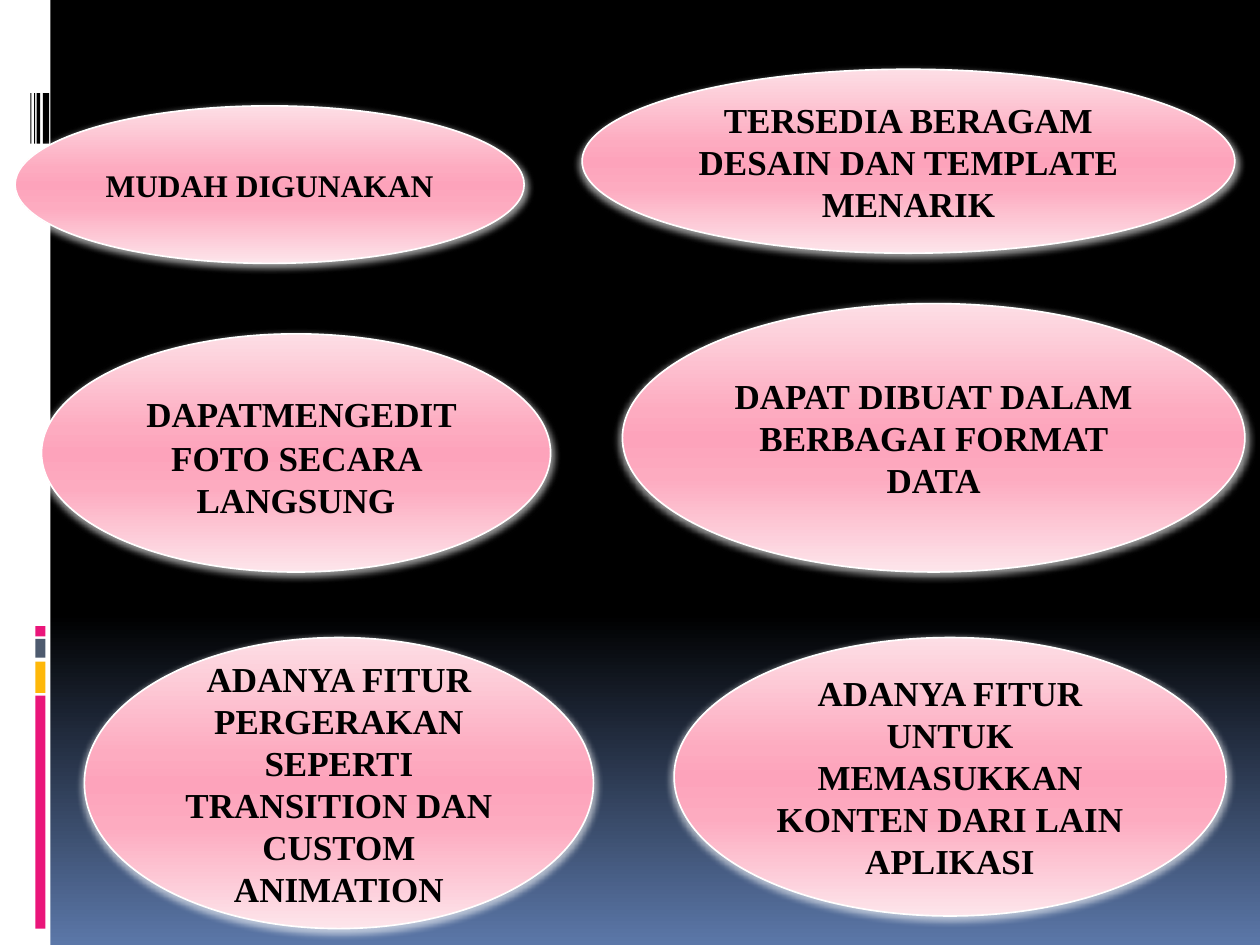
import pptx
import pptx.dml.color
import pptx.enum.shapes
import pptx.enum.text
import pptx.oxml
import pptx.oxml.ns
import pptx.util
from lxml import etree
from pptx.util import Inches

FONT = "Times New Roman"
COLORS = {
    "white": "FFFFFF", "black": "000000",
    "pink": "EA157A", "yellow": "FEB80A", "slate": "4E5B6F",
}
BACKGROUND_STOPS = [(0, "000000"), (65, "000000"), (100, "5B77A8")]
BUBBLE_STOPS = [(0, "FDDEE5"), (40, "FDABC0"), (50, "FDA3BB"),
                (65, "FDABC0"), (100, "FDE5EB")]

# left, top, width, height, colour
SIDE_BAR = [
    (0, 0, 0.4, 7.5, "white"),
    (0.28, 5.52, 0.08, 1.85, "pink"),
    (0.28, 5.25, 0.08, 0.25, "yellow"),
    (0.28, 5.07, 0.08, 0.15, "slate"),
    (0.28, 4.97, 0.08, 0.08, "pink"),
]
# left, width
BARCODE = [(0.34, 0.05), (0.29, 0.03), (0.27, 0.01), (0.24, 0.01)]

# left, top, width, height, runs as (text, size)
BUBBLES = [
    (0.12, 0.84, 4.04, 1.25, [("MUDAH DIGUNAKAN", 18)]),
    (0.33, 2.65, 4.04, 1.89,
     [(" ", 24), ("DAPATMENGEDIT FOTO SECARA LANGSUNG", 20)]),
    (4.62, 0.55, 5.18, 1.46,
     [("TERSEDIA BERAGAM DESAIN DAN TEMPLATE MENARIK", 20)]),
    (0.67, 5.06, 4.04, 2.31,
     [("ADANYA FITUR PERGERAKAN SEPERTI TRANSITION DAN CUSTOM ANIMATION", 20)]),
    (4.94, 2.41, 4.94, 2.13,
     [("DAPAT DIBUAT DALAM BERBAGAI FORMAT DATA", 20)]),
    (5.35, 5.06, 4.38, 2.21,
     [("ADANYA FITUR UNTUK MEMASUKKAN KONTEN DARI LAIN APLIKASI", 20)]),
]


def rgb(name):
    return pptx.dml.color.RGBColor.from_string(COLORS[name])


def set_gradient(fill, element, stops):
    """Fill from top to bottom; element is the XML that holds the fill."""
    fill.gradient()
    fill.gradient_angle = 270
    stop_list = next(element.iter(pptx.oxml.ns.qn("a:gsLst")))
    for old in list(stop_list):
        stop_list.remove(old)
    for percent, color in stops:
        gs = etree.SubElement(stop_list, pptx.oxml.ns.qn("a:gs"),
                              pos=str(percent * 1000))
        etree.SubElement(gs, pptx.oxml.ns.qn("a:srgbClr"), val=color)


def add_halo(sp):
    """Give the shape a soft white shadow just below it."""
    effects = next(sp._element.iter(pptx.oxml.ns.qn("a:effectLst")))
    effects.append(pptx.oxml.parse_xml(
        f'<a:outerShdw {pptx.oxml.ns.nsdecls("a")} blurRad="50800" '
        'dist="19050" dir="5400000" sx="101000" sy="101000" algn="ctr" '
        f'rotWithShape="0"><a:srgbClr val="{COLORS["white"]}">'
        '<a:alpha val="60000"/></a:srgbClr></a:outerShdw>'))


def add_shape(s, kind, left, top, width, height):
    sp = s.shapes.add_shape(kind, Inches(left), Inches(top),
                            Inches(width), Inches(height))
    sp.shadow.inherit = False
    return sp


def add_block(s, left, top, width, height, color):
    sp = add_shape(s, pptx.enum.shapes.MSO_SHAPE.RECTANGLE,
                   left, top, width, height)
    sp.fill.solid()
    sp.fill.fore_color.rgb = rgb(color)
    sp.line.fill.background()


def add_bubble(s, left, top, width, height, runs):
    sp = add_shape(s, pptx.enum.shapes.MSO_SHAPE.OVAL,
                   left, top, width, height)
    set_gradient(sp.fill, sp._element, BUBBLE_STOPS)
    sp.line.color.rgb = rgb("white")
    sp.line.width = pptx.util.Pt(0.94)
    add_halo(sp)
    tf = sp.text_frame
    tf.word_wrap = True
    tf.vertical_anchor = pptx.enum.text.MSO_ANCHOR.MIDDLE
    p = tf.paragraphs[0]
    p.alignment = pptx.enum.text.PP_ALIGN.CENTER
    for text, size in runs:
        r = p.add_run()
        r.text = text
        r.font.name = FONT
        r.font.size = pptx.util.Pt(size)
        r.font.bold = True
        r.font.color.rgb = rgb("black")


def main():
    prs = pptx.Presentation()
    prs.slide_width = Inches(10)
    prs.slide_height = Inches(7.5)
    s = prs.slides.add_slide(prs.slide_layouts[6])
    set_gradient(s.background.fill, s._element, BACKGROUND_STOPS)
    for block in SIDE_BAR:
        add_block(s, *block)
    for left, width in BARCODE:
        add_block(s, left, 0.74, width, 0.4, "black")
    for bubble in BUBBLES:
        add_bubble(s, *bubble)
    prs.save("out.pptx")


if __name__ == "__main__":
    main()
